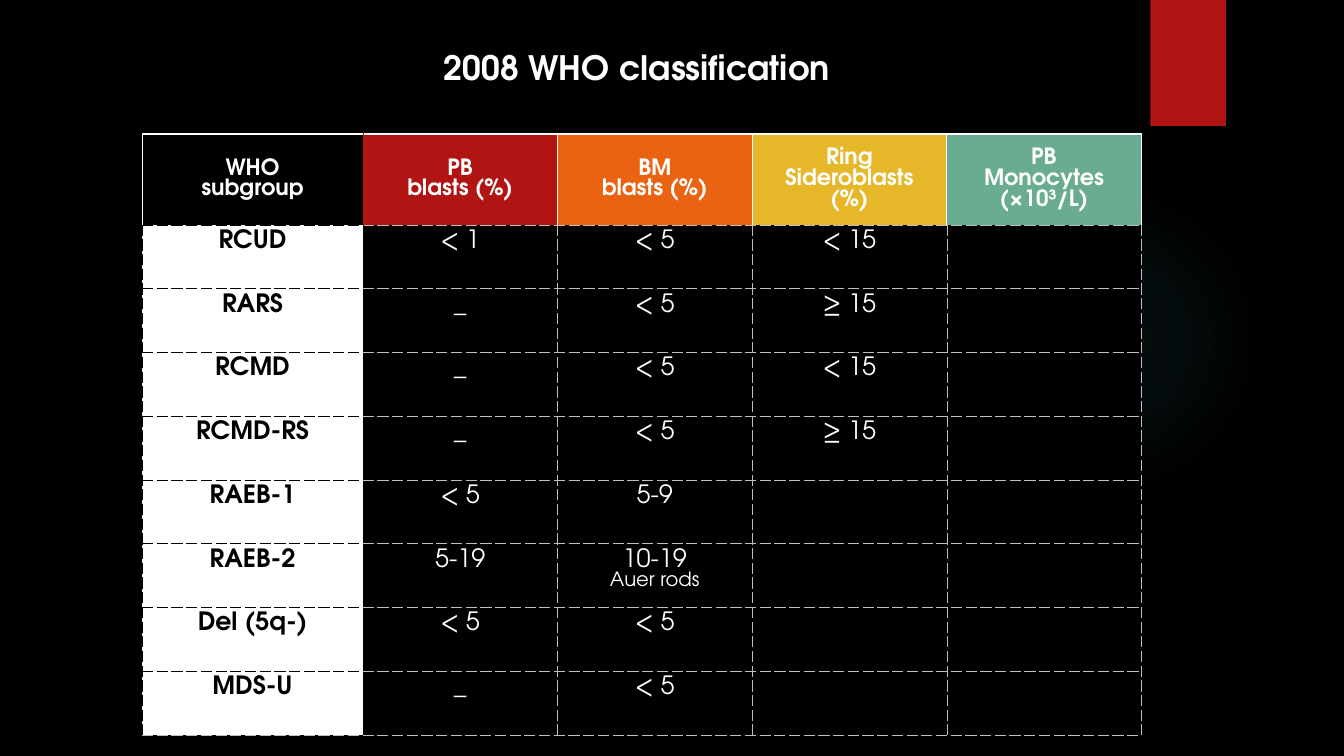
from lxml import etree
from pptx import Presentation
from pptx.dml.color import RGBColor
from pptx.enum.shapes import MSO_SHAPE as SHAPE
from pptx.enum.text import MSO_ANCHOR as ANCHOR, PP_ALIGN as ALIGN
from pptx.oxml import parse_xml
from pptx.util import Inches, Pt

BLACK = RGBColor(0x00, 0x00, 0x00)
WHITE = RGBColor(0xFF, 0xFF, 0xFF)
GREY = RGBColor(0xBF, 0xBF, 0xBF)
RED = RGBColor(0xB0, 0x15, 0x13)
ORANGE = RGBColor(0xEA, 0x63, 0x12)
YELLOW = RGBColor(0xE6, 0xB7, 0x29)
GREEN = RGBColor(0x6A, 0xAC, 0x90)
GLOW = RGBColor(0x50, 0xB9, 0xC1)
FONT = "TeX Gyre Adventor"
NS = 'xmlns:a="http://schemas.openxmlformats.org/drawingml/2006/main"'


def write(tf, lines, sizes=(18,), color=WHITE, bold=False, spacing=None):
    """Fill a frame with centred lines; the last size serves all further lines."""
    for i, line in enumerate(lines):
        p = tf.paragraphs[0] if i == 0 else tf.add_paragraph()
        p.alignment = ALIGN.CENTER
        p.line_spacing = spacing
        r = p.add_run()
        r.text = line
        r.font.name = FONT
        r.font.size = Pt(sizes[min(i, len(sizes) - 1)])
        r.font.bold = bold
        r.font.color.rgb = color


def set_borders(cell, **sides):
    """Draw borders L, R, T, B: white ones solid at 1 pt, others thin and dashed."""
    tcPr = cell._tc.get_or_add_tcPr()
    for i, side in enumerate("LRTB"):
        color = sides[side]
        width, dash = (Pt(1), "solid") if color == WHITE else (Pt(0.25), "sysDash")
        tcPr.insert(i, parse_xml(
            f'<a:ln{side} {NS} w="{width}"><a:solidFill><a:srgbClr val="{color}"/>'
            f'</a:solidFill><a:prstDash val="{dash}"/></a:ln{side}>'))


prs = Presentation()
prs.slide_width, prs.slide_height = Inches(13.33), Inches(7.5)
s = prs.slides.add_slide(prs.slide_layouts[5])
s.background.fill.solid()
s.background.fill.fore_color.rgb = BLACK

# Glow behind the table
glow = s.shapes.add_shape(SHAPE.OVAL, Inches(9.41), Inches(1.83), Inches(3.08), Inches(3.08))
glow.shadow.inherit = False
glow.line.fill.background()
stops = "".join(
    f'<a:gs pos="{pos * 1000}"><a:srgbClr val="{GLOW}"><a:alpha val="{alpha * 1000}"/>'
    f'</a:srgbClr></a:gs>' for pos, alpha in [(0, 7), (36, 6), (69, 0), (100, 0)])
glow.element.spPr.find("{*}prstGeom").addnext(parse_xml(
    f'<a:gradFill {NS}><a:gsLst>{stops}</a:gsLst><a:path path="circle">'
    '<a:fillToRect l="50000" t="50000" r="50000" b="50000"/></a:path></a:gradFill>'))

# Red tab and translucent title panel
panels = [
    (11.41, 0, 0.75, 1.25, RED, 100, 45, 3, 2),
    (3.87, 0.27, 4.9, 0.73, BLACK, 42, 32, 3.5, 2.2),
]
for x, y, w, h, color, opacity, shade, blur, dist in panels:
    sp = s.shapes.add_shape(SHAPE.RECTANGLE, Inches(x), Inches(y), Inches(w), Inches(h))
    sp.shadow.inherit = False
    sp.fill.solid()
    sp.fill.fore_color.rgb = color
    sp.line.fill.background()
    spPr = sp.element.spPr
    if opacity < 100:
        etree.SubElement(spPr.find("{*}solidFill")[0], spPr.tag.replace(
            spPr.tag, "{http://schemas.openxmlformats.org/drawingml/2006/main}alpha"),
            val=str(opacity * 1000))
    spPr.find("{*}effectLst").append(parse_xml(
        f'<a:outerShdw {NS} blurRad="{Pt(blur)}" dist="{Pt(dist)}" dir="5400000">'
        f'<a:srgbClr val="000000"><a:alpha val="{shade * 1000}"/></a:srgbClr></a:outerShdw>'))

# Classification table
headers = [
    (["WHO", "subgroup"], BLACK),
    (["PB", "blasts (%)"], RED),
    (["BM", "blasts (%)"], ORANGE),
    (["Ring", "Sideroblasts", "(%)"], YELLOW),
    (["PB", "Monocytes", "(×10³/L)"], GREEN),
]
subgroups = [
    ("RCUD", "< 1", "< 5", "< 15", ""),
    ("RARS", "_", "< 5", "≥ 15", ""),
    ("RCMD", "_", "< 5", "< 15", ""),
    ("RCMD-RS", "_", "< 5", "≥ 15", ""),
    ("RAEB-1", "< 5", "5-9", "", ""),
    ("RAEB-2", "5-19", "10-19\nAuer rods", "", ""),
    ("Del (5q-)", "< 5", "< 5", "", ""),
    ("MDS-U", "_", "< 5", "", ""),
]
table = s.shapes.add_table(len(subgroups) + 1, len(headers), Inches(1.41), Inches(1.33),
                           Inches(9.91), Inches(5.96)).table
table.first_row = table.horz_banding = False
for c, column in enumerate(table.columns):
    column.width = Inches(1.93 if c else 2.19)
for r, row in enumerate(table.rows):
    row.height = Inches((5.96 - 0.9) / len(subgroups) if r else 0.9)

for c, (lines, color) in enumerate(headers):
    cell = table.cell(0, c)
    cell.fill.solid()
    cell.fill.fore_color.rgb = color
    cell.vertical_anchor = ANCHOR.MIDDLE
    write(cell.text_frame, lines, sizes=(16,), bold=True)
    set_borders(cell, L=RED if c == 1 else WHITE, R=WHITE if c else RED,
                T=WHITE, B=GREY if c else BLACK)

for r, values in enumerate(subgroups, start=1):
    for c, value in enumerate(values):
        cell = table.cell(r, c)
        cell.fill.solid()
        cell.fill.fore_color.rgb = BLACK if c else WHITE
        cell.margin_left = cell.margin_right = Inches(0.09)
        if value:
            write(cell.text_frame, value.split("\n"), sizes=(18, 14),
                  color=WHITE if c else BLACK, bold=c == 0)
        edge = GREY if c else BLACK
        set_borders(cell, L=GREY if c > 1 else BLACK, R=edge, T=edge,
                    B=GREY if r == len(subgroups) else edge)

# Title, in front of its panel
title = s.shapes.title
title.left, title.top = Inches(2.15), Inches(0.46)
title.width, title.height = Inches(8.33), Inches(0.69)
title.text_frame.word_wrap = True
title.text_frame.vertical_anchor = ANCHOR.TOP
write(title.text_frame, ["2008 WHO classification"], sizes=(24,), bold=True, spacing=0.9)
title.element.getparent().append(title.element)

prs.save("out.pptx")
